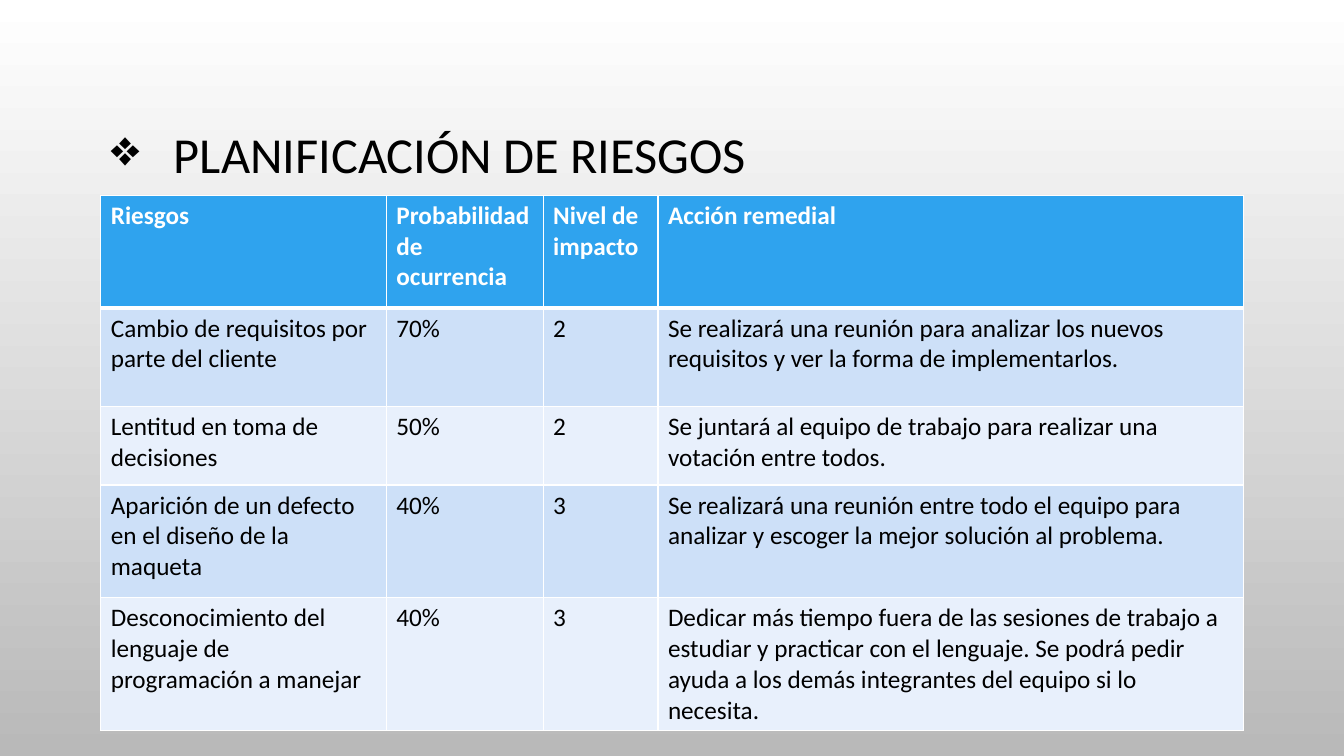
from dataclasses import dataclass
from lxml.etree import SubElement as Sub
from pptx import Presentation
from pptx.dml.color import RGBColor as Rgb
from pptx.enum.text import MSO_ANCHOR as Anchor, PP_ALIGN as Align
from pptx.oxml.ns import qn
from pptx.util import Pt


@dataclass(frozen=True)
class Theme:
    font: str = "Calibri"
    title: int = 36
    body: int = 18
    ink: str = "000000"
    white: str = "FFFFFF"
    shade: str = "B9B9B9"
    head: str = "2FA3EE"
    bands: tuple = ("CDE0F8", "E8F0FC")
    thin: int = 1
    thick: int = 3


def apply(item, **vals):
    for key, val in vals.items():
        setattr(item, key, val)


class Deck:
    def __init__(self, theme, wide, high):
        self.theme = theme
        self.file = Presentation()
        apply(self.file, slide_width=Pt(wide), slide_height=Pt(high))
        self.slide = self.file.slides.add_slide(self.file.slide_layouts[5])

    def back(self, *tones):
        fill = self.slide.background.fill
        fill.gradient()
        fill.gradient_angle = 270
        for stop, tone in zip(fill.gradient_stops, tones):
            stop.color.rgb = Rgb.from_string(tone)

    def text(self, para, words, size, tone, bold=False):
        run = para.add_run()
        run.text = words
        apply(run.font, name=self.theme.font, size=Pt(size), bold=bold)
        run.font.color.rgb = Rgb.from_string(tone)

    def title(self, words, mark, hang, left, top, width, height):
        box = self.slide.shapes.title
        apply(box, left=Pt(left), top=Pt(top), width=Pt(width), height=Pt(height))
        apply(box.text_frame, vertical_anchor=Anchor.MIDDLE, word_wrap=True)
        para = box.text_frame.paragraphs[0]
        apply(para, alignment=Align.LEFT, line_spacing=0.9)
        props = para._p.get_or_add_pPr()
        props.set("marL", str(Pt(hang)))
        props.set("indent", str(-Pt(hang)))
        Sub(props, qn("a:buChar"), char=mark)
        self.text(para, words, self.theme.title, self.theme.ink)

    def edge(self, cell, **sides):
        props = cell._tc.get_or_add_tcPr()
        for side, size in sides.items():
            line = Sub(props, qn(f"a:ln{side}"), w=str(Pt(size)))
            fill = Sub(line, qn("a:solidFill"))
            Sub(fill, qn("a:srgbClr"), val=self.theme.white)

    def cell(self, cell, words, row):
        look = self.theme
        head = row == 0
        self.edge(cell, L=look.thin, R=look.thin,
                  T=look.thick if row == 1 else look.thin,
                  B=look.thick if head else look.thin)
        cell.fill.solid()
        tone = look.head if head else look.bands[(row - 1) % 2]
        cell.fill.fore_color.rgb = Rgb.from_string(tone)
        self.text(cell.text_frame.paragraphs[0], words, look.body,
                  look.white if head else look.ink, head)

    def table(self, data, cols, rows, left, top):
        frame = self.slide.shapes.add_table(
            len(rows), len(cols), Pt(left), Pt(top), Pt(sum(cols)), Pt(sum(rows)))
        grid = frame.table
        grid.horz_banding = False
        for col, width in zip(grid.columns, cols):
            col.width = Pt(width)
        for row, height in zip(grid.rows, rows):
            row.height = Pt(height)
        for y, line in enumerate(data):
            for x, words in enumerate(line):
                self.cell(grid.cell(y, x), words, y)


RISKS = [
    ("Riesgos", "Probabilidad de ocurrencia", "Nivel de impacto", "Acción remedial"),
    ("Cambio de requisitos por parte del cliente", "70%", "2",
     "Se realizará una reunión para analizar los nuevos requisitos y ver la forma "
     "de implementarlos."),
    ("Lentitud en toma de decisiones", "50%", "2",
     "Se juntará al equipo de trabajo para realizar una votación entre todos."),
    ("Aparición de un defecto en el diseño de la maqueta", "40%", "3",
     "Se realizará una reunión entre todo el equipo para analizar y escoger la "
     "mejor solución al problema."),
    ("Desconocimiento del lenguaje de programación a manejar", "40%", "3",
     "Dedicar más tiempo fuera de las sesiones de trabajo a estudiar y practicar "
     "con el lenguaje. Se podrá pedir ayuda a los demás integrantes del equipo si "
     "lo necesita."),
]


def main():
    theme = Theme()
    deck = Deck(theme, 960, 540)
    deck.back(theme.white, theme.shade)
    deck.title("PLANIFICACIÓN DE RIESGOS", "❖", 45, 72, 49, 816, 126)
    deck.table(RISKS, (204, 112, 82, 418), (80.5, 70.5, 56, 80.5, 80.5), 72, 139.5)
    deck.file.save("out.pptx")


if __name__ == "__main__":
    main()
